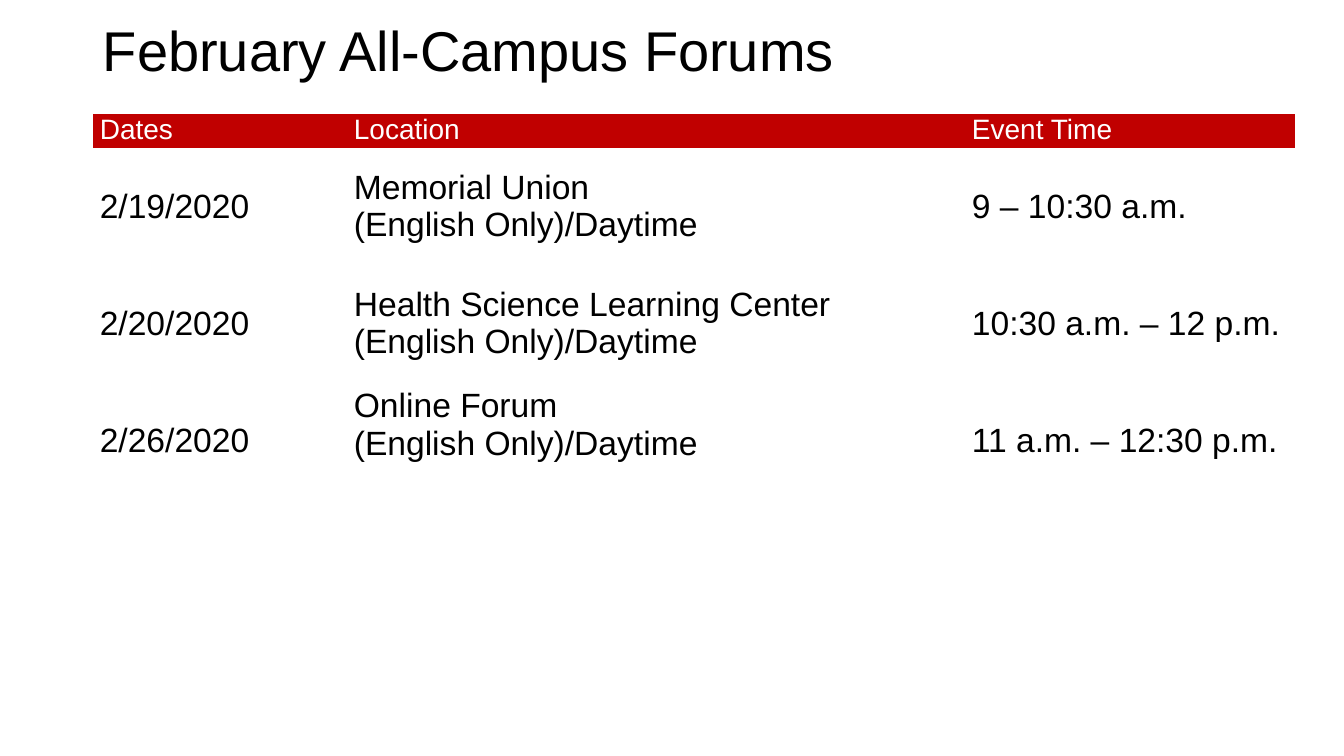
from pptx import Presentation
from pptx.dml.color import RGBColor
from pptx.enum.text import MSO_ANCHOR as Anchor, MSO_AUTO_SIZE as AutoSize, PP_ALIGN as Align
from pptx.oxml.ns import qn
from pptx.util import Inches, Pt

COLORS = {"header": "C00000", "header_text": "FFFFFF", "text": "000000"}
FONT = "Arial"
NO_STYLE = "{2D5ABB26-0587-4C30-8999-92F81FD0307C}"
LEFT = Inches(0.92)
COLUMN_WIDTHS = [2.52, 6.13, 3.27]
ROW_HEIGHTS = [0.34, 1.16, 1.16, 1.16]
FORUMS = [
    ["Dates", "Location", "Event Time"],
    ["2/19/2020", "Memorial Union\n(English Only)/Daytime", "9 – 10:30 a.m."],
    ["2/20/2020", "Health Science Learning Center\v(English Only)/Daytime", "10:30 a.m. – 12 p.m."],
    ["2/26/2020", "Online Forum\n(English Only)/Daytime", "11 a.m. – 12:30 p.m."],
]


def format_paragraph(paragraph, size, color):
    paragraph.alignment = Align.LEFT
    paragraph.font.name = FONT
    paragraph.font.size = Pt(size)
    paragraph.font.bold = False
    paragraph.font.color.rgb = RGBColor.from_string(COLORS[color])


presentation = Presentation()
presentation.slide_width = Inches(13.33)
presentation.slide_height = Inches(7.5)
slide = presentation.slides.add_slide(presentation.slide_layouts[5])

title = slide.shapes.title
title.left, title.top = LEFT, Inches(0.18)
title.width, title.height = Inches(11.5), Inches(0.7)
title.text_frame.text = "February All-Campus Forums"
title.text_frame.auto_size = AutoSize.NONE
title.text_frame.vertical_anchor = Anchor.MIDDLE
title_paragraph = title.text_frame.paragraphs[0]
title_paragraph.line_spacing = 0.9
format_paragraph(title_paragraph, 40, "text")

table_frame = slide.shapes.add_table(
    len(FORUMS), len(COLUMN_WIDTHS), LEFT, Inches(1.13),
    Inches(sum(COLUMN_WIDTHS)), Inches(sum(ROW_HEIGHTS)),
)
table = table_frame.table
table.horz_banding = False
for style in table_frame.element.iter(qn("a:tableStyleId")):
    style.text = NO_STYLE
for column, width in zip(table.columns, COLUMN_WIDTHS):
    column.width = Inches(width)

for row, height, texts in zip(table.rows, ROW_HEIGHTS, FORUMS):
    row.height = Inches(height)
    is_header = texts is FORUMS[0]
    for cell, text in zip(row.cells, texts):
        cell.text = text
        cell.margin_left = cell.margin_right = Inches(0.07)
        cell.margin_top = cell.margin_bottom = 0
        cell.vertical_anchor = Anchor.TOP if is_header else Anchor.MIDDLE
        if is_header:
            cell.fill.solid()
            cell.fill.fore_color.rgb = RGBColor.from_string(COLORS["header"])
        else:
            cell.fill.background()
        for paragraph in cell.text_frame.paragraphs:
            format_paragraph(paragraph, 20 if is_header else 24, "header_text" if is_header else "text")

online_forum = table.cell(3, 1)
online_forum.margin_bottom = Inches(0.31)

presentation.save("out.pptx")
